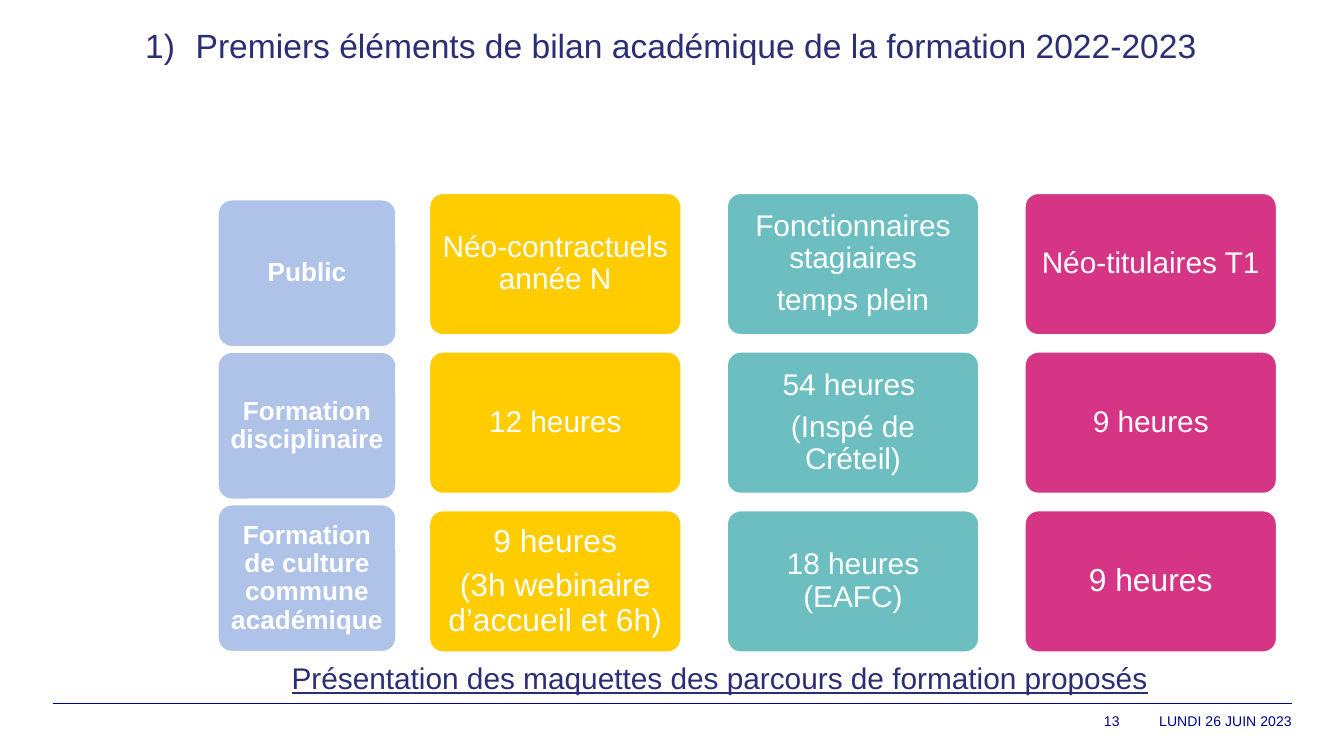
import pptx
import pptx.dml.color
import pptx.enum.shapes
import pptx.enum.text
import pptx.oxml.ns
import pptx.util
from lxml import etree

Pt = pptx.util.Pt
RGBColor = pptx.dml.color.RGBColor
ALIGN = pptx.enum.text.PP_ALIGN
ANCHOR = pptx.enum.text.MSO_ANCHOR
qn = pptx.oxml.ns.qn

WHITE = RGBColor(0xFF, 0xFF, 0xFF)
NAVY = RGBColor(0x2B, 0x2E, 0x75)
FOOTER_BLUE = RGBColor(0x00, 0x00, 0x91)
PALE_BLUE = RGBColor(0xAE, 0xC3, 0xE7)
YELLOW = RGBColor(0xFF, 0xCC, 0x00)
TEAL = RGBColor(0x6C, 0xBE, 0xC0)
PINK = RGBColor(0xD6, 0x34, 0x84)

# Content: each cell is (paragraphs, text size)
TITLE = "Premiers éléments de bilan académique de la formation 2022-2023"
CAPTION = "Présentation des maquettes des parcours de formation proposés"
PAGE, DATE = "13", "LUNDI 26 JUIN 2023"
ROW_LABELS = [
    (["Public"], 14),
    (["Formation disciplinaire"], 14),
    (["Formation de culture commune académique"], 14),
]
AUDIENCES = [
    (YELLOW, [
        (["Néo-contractuels année N"], 16),
        (["12 heures"], 16),
        (["9 heures", "(3h webinaire d’accueil et 6h)"], 17),
    ]),
    (TEAL, [
        (["Fonctionnaires stagiaires", " temps plein "], 16),
        (["54 heures ", "(Inspé de Créteil)"], 16),
        (["18 heures (EAFC)"], 16),
    ]),
    (PINK, [
        (["Néo-titulaires T1"], 16),
        (["9 heures"], 16),
        (["9 heures"], 17),
    ]),
]

# Layout, in points
LABELS = {"left": 116.2, "top": 106.4, "step": 81.7, "width": 96.6, "height": 80, "inset": 4.2}
CARDS = {"left": 229.5, "top": 103, "step": 85, "width": 136, "height": 77, "inset": 5}
COLUMN_STEP = 159.5
RULE_LEFT, RULE_RIGHT, RULE_TOP = 28.2, 692, 376.8


def apply(target, formats):
    for name, value in formats.items():
        setattr(target, name, value)


def write(frame, paragraphs, color, formats, align, inset=(7.2, 3.6), anchor=ANCHOR.TOP,
          line_spacing=None, gap=0):
    side, end = map(Pt, inset)
    apply(frame, {"word_wrap": True, "auto_size": pptx.enum.text.MSO_AUTO_SIZE.NONE,
                  "vertical_anchor": anchor, "margin_left": side, "margin_right": side,
                  "margin_top": end, "margin_bottom": end})
    for index, text in enumerate(paragraphs):
        paragraph = frame.add_paragraph() if index else frame.paragraphs[0]
        paragraph.alignment = align
        if line_spacing:
            paragraph.line_spacing = line_spacing
        if index:
            paragraph.space_before = Pt(gap)
        run = paragraph.add_run()
        run.text = text
        apply(run.font, {"name": "Arial", **formats})
        run.font.color.rgb = color


def add_stack(slide, cells, fill, grid, left, bold=False):
    for row, (paragraphs, size) in enumerate(cells):
        card = slide.shapes.add_shape(
            pptx.enum.shapes.MSO_SHAPE.ROUNDED_RECTANGLE, Pt(left),
            Pt(grid["top"] + row * grid["step"]), Pt(grid["width"]), Pt(grid["height"]))
        card.adjustments[0] = 0.1
        card.shadow.inherit = False
        card.fill.solid()
        card.fill.fore_color.rgb = fill
        card.line.color.rgb = WHITE
        card.line.width = Pt(2)
        write(card.text_frame, paragraphs, WHITE, {"size": Pt(size), "bold": bold},
              ALIGN.CENTER, (grid["inset"], grid["inset"]), ANCHOR.MIDDLE, 0.9, 0.33 * size)


def main():
    deck = pptx.Presentation()
    apply(deck, {"slide_width": Pt(720), "slide_height": Pt(405)})
    slide = deck.slides.add_slide(deck.slide_layouts[5])

    # Numbered title
    title = slide.shapes.title
    apply(title, {"left": Pt(70.6), "top": Pt(10), "width": Pt(584), "height": Pt(29)})
    write(title.text_frame, [TITLE], NAVY, {"size": Pt(18)}, ALIGN.LEFT)
    properties = title.text_frame.paragraphs[0]._p.get_or_add_pPr()
    properties.set("marL", str(Pt(27)))
    properties.set("indent", str(Pt(-27)))
    etree.SubElement(properties, qn("a:buFont")).set("typeface", "Arial")
    etree.SubElement(properties, qn("a:buAutoNum")).set("type", "arabicParenR")

    # Audience columns and row labels
    for column, (fill, cells) in enumerate(AUDIENCES):
        add_stack(slide, cells, fill, CARDS, CARDS["left"] + column * COLUMN_STEP)
    add_stack(slide, ROW_LABELS, PALE_BLUE, LABELS, LABELS["left"], bold=True)

    # Caption
    caption = slide.shapes.add_textbox(Pt(144.7), Pt(350), Pt(481.7), Pt(26.6))
    write(caption.text_frame, [CAPTION], NAVY, {"size": Pt(16), "underline": True}, ALIGN.CENTER)

    # Footer rule, page number and date
    rule = slide.shapes.add_connector(pptx.enum.shapes.MSO_CONNECTOR.STRAIGHT, Pt(RULE_LEFT),
                                      Pt(RULE_TOP), Pt(RULE_RIGHT), Pt(RULE_TOP))
    rule.line.color.rgb = FOOTER_BLUE
    rule.line.width = Pt(0.8)
    etree.SubElement(rule._element.spPr, qn("a:effectLst"))
    for text, left, right in [(PAGE, 493.2, 599.8), (DATE, 599.8, RULE_RIGHT)]:
        footer = slide.shapes.add_textbox(Pt(left), Pt(RULE_TOP), Pt(right - left), Pt(18.7))
        write(footer.text_frame, [text], FOOTER_BLUE, {"size": Pt(7.5)}, ALIGN.RIGHT,
              (0, 0), ANCHOR.MIDDLE)

    deck.save("out.pptx")


if __name__ == "__main__":
    main()
